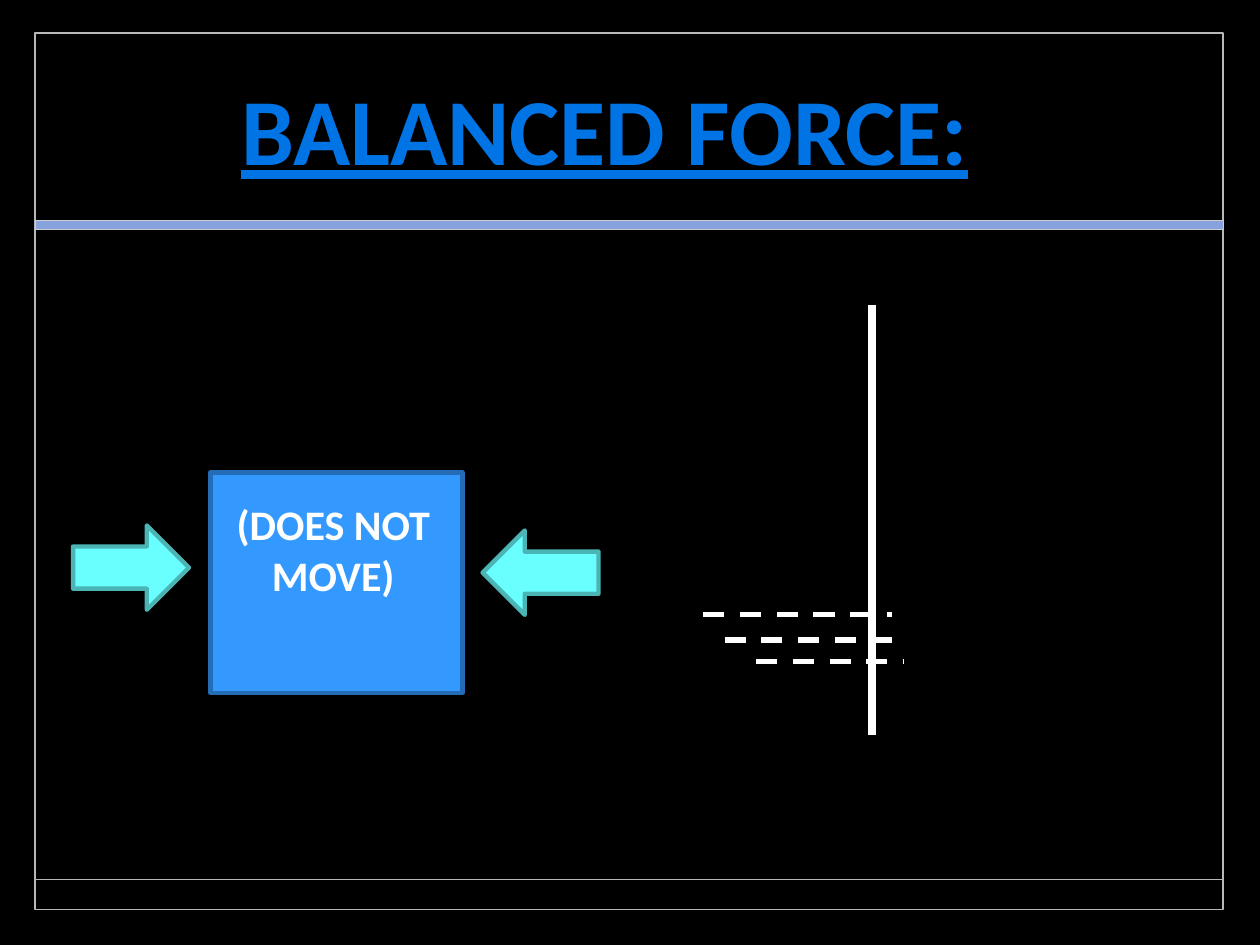
import pptx
import pptx.util
from lxml import etree
from pptx.dml.color import RGBColor
from pptx.enum.dml import MSO_LINE
from pptx.enum.shapes import MSO_CONNECTOR, MSO_SHAPE
from pptx.enum.text import MSO_ANCHOR, MSO_AUTO_SIZE, PP_ALIGN
from pptx.oxml.ns import qn
from pptx.util import Inches

COLORS = {
    "background": "000000", "frame": "B8B8B8",
    "band": "88A2DE", "band_edge": "CCCCCC",
    "title": "0073E5", "white": "FFFFFF",
    "block": "3399FF", "block_edge": "246CB5",
    "arrow": "69FFFF", "arrow_edge": "4BB5B5",
}


def rgb(name):
    return RGBColor.from_string(COLORS[name])


def add_outlined(slide, kind, box, fill, edge, width):
    shape = slide.shapes.add_shape(kind, *map(Inches, box))
    shape.shadow.inherit = False
    if fill:
        shape.fill.solid()
        shape.fill.fore_color.rgb = rgb(fill)
    else:
        shape.fill.background()
    shape.line.color.rgb = rgb(edge)
    shape.line.width = pptx.util.Pt(width)
    return shape


def add_rule(slide, start, end, color, width, dash=None):
    rule = slide.shapes.add_connector(
        MSO_CONNECTOR.STRAIGHT, *map(Inches, start + end))
    rule.line.color.rgb = rgb(color)
    rule.line.width = pptx.util.Pt(width)
    if dash:
        rule.line.dash_style = dash
    etree.SubElement(rule._element.spPr, qn("a:effectLst"))


def write_text(shape, text, size, color, underline=False):
    frame = shape.text_frame
    frame.word_wrap = True
    frame.auto_size = MSO_AUTO_SIZE.SHAPE_TO_FIT_TEXT
    frame.vertical_anchor = MSO_ANCHOR.TOP
    paragraph = frame.paragraphs[0]
    paragraph.alignment = PP_ALIGN.CENTER
    run = paragraph.add_run()
    run.text = text
    run.font.name = "Calibri"
    run.font.size = pptx.util.Pt(size)
    run.font.bold = True
    run.font.underline = underline
    run.font.color.rgb = rgb(color)


def draw_frame(slide, left, top, width, height):
    add_outlined(slide, MSO_SHAPE.RECTANGLE, (left, top, width, height),
                 None, "frame", 1)
    footer_y = top + height - 0.24
    add_rule(slide, (left, footer_y), (left + width, footer_y), "frame", 1)
    add_outlined(slide, MSO_SHAPE.RECTANGLE, (left, top + 1.49, width, 0.07),
                 "band", "band_edge", 0.25)


def place_title(slide, left, top, width, height):
    title = slide.shapes.title
    title.left, title.top, title.width, title.height = map(
        Inches, (left, top, width, height))
    write_text(title, "BALANCED FORCE:", 54, "title", underline=True)


def draw_balanced_block(slide, left, top, width, height):
    # Block between two opposing pushes
    block_left, block_width = left + 1.09, 2
    add_outlined(slide, MSO_SHAPE.RECTANGLE,
                 (block_left, top, block_width, height),
                 "block", "block_edge", 2.5)
    push_width, push_height = 0.92, 0.67
    for push_left, push_top, turn in (
            (left, top + 0.42, 0),
            (left + width - push_width, top + 0.46, 180)):
        push = add_outlined(slide, MSO_SHAPE.RIGHT_ARROW,
                            (push_left, push_top, push_width, push_height),
                            "arrow", "arrow_edge", 2.5)
        push.rotation = turn

    # Caption over the block
    caption = slide.shapes.add_textbox(*map(
        Inches, (block_left + 0.09, top + 0.16, 1.77, 0.91)))
    write_text(caption, "(DOES NOT MOVE)", 24, "white")


def draw_pole(slide, left, top, width, height):
    pole_x = left + 1.34
    add_rule(slide, (pole_x, top), (pole_x, top + height), "white", 4.5)
    # Dashed ground lines: start, end and depth
    for start, end, depth in ((0, 1.5, 2.46), (0.42, width, 2.83),
                              (0.17, 1.5, 2.66)):
        add_rule(slide, (left + start, top + depth),
                 (left + end, top + depth), "white", 3, MSO_LINE.DASH)


def main():
    deck = pptx.Presentation()
    deck.slide_width, deck.slide_height = Inches(10), Inches(7.5)
    slide = deck.slides.add_slide(deck.slide_layouts[5])
    slide.background.fill.solid()
    slide.background.fill.fore_color.rgb = rgb("background")

    draw_frame(slide, 0.28, 0.26, 9.43, 6.96)
    place_title(slide, 0.35, 0.51, 8.9, 1.01)
    draw_balanced_block(slide, 0.58, 3.75, 4.17, 1.75)
    draw_pole(slide, 5.58, 2.42, 1.59, 3.41)
    deck.save("out.pptx")


if __name__ == "__main__":
    main()
